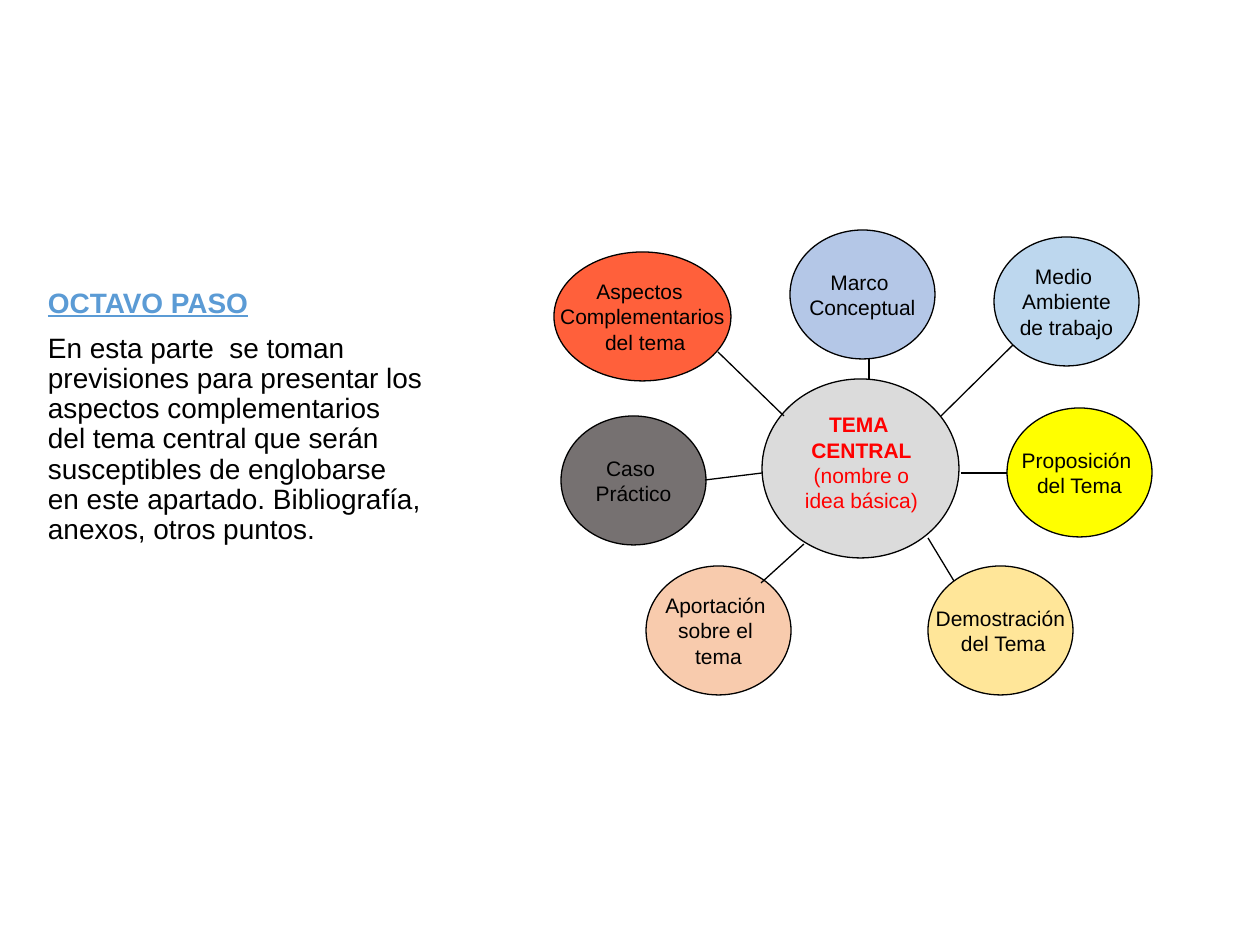
from lxml import etree
from pptx import Presentation
from pptx.dml.color import RGBColor
from pptx.enum.shapes import MSO_CONNECTOR, MSO_SHAPE
from pptx.enum.text import MSO_ANCHOR, PP_ALIGN
from pptx.oxml.ns import qn
from pptx.util import Pt

ELLIPSE = MSO_SHAPE.OVAL
STRAIGHT = MSO_CONNECTOR.STRAIGHT
CENTER = PP_ALIGN.CENTER
LEFT = PP_ALIGN.LEFT
MIDDLE = MSO_ANCHOR.MIDDLE
TOP = MSO_ANCHOR.TOP

SCALE = 914400 / 126
FONT = "Arial"
LINE_WIDTH = Pt(0.75)
TOPIC_HEIGHT = 129
COLORS = {
    "black": "000000",
    "red": "FF0000",
    "blue": "5B9BD5",
    "silver": "DBDBDB",
    "coral": "FF603B",
    "yellow": "FFFF00",
    "sky": "BDD7EE",
    "sand": "FFE699",
    "periwinkle": "B4C7E7",
    "peach": "F8CBAD",
    "gray": "767171",
}
TOPICS = [
    (554, 252, 177, "coral", ["Aspectos ", "Complementarios", " del tema"]),
    (1007, 408, 145, "yellow", ["Proposición ", "del Tema"]),
    (994, 237, 145, "sky", ["Medio ", "Ambiente", "de trabajo"]),
    (928, 566, 145, "sand", ["Demostración", " del Tema"]),
    (790, 230, 145, "periwinkle", ["Marco ", "Conceptual"]),
    (646, 566, 145, "peach", ["Aportación ", "sobre el ", "tema"]),
    (561, 416, 145, "gray", ["Caso ", "Práctico"]),
]
SPOKES = [
    (718, 352, 784, 416),
    (1013, 345, 941, 416),
    (705, 480, 762, 473),
    (961, 473, 1007, 473),
    (804, 544, 761, 583),
    (928, 538, 954, 581),
    (869, 359, 869, 380),
]
BODY = (
    "En esta parte  se toman previsiones para presentar los aspectos "
    "complementarios del tema central que serán susceptibles de englobarse "
    "en este apartado. Bibliografía, anexos, otros puntos."
)


def px(*lengths):
    return [round(length * SCALE) for length in lengths]


def color(name):
    return RGBColor.from_string(COLORS[name])


def apply_format(target, values):
    for name, value in values.items():
        setattr(target, name, value)


def set_frame(frame, wrap, anchor, margins):
    sides = ("margin_left", "margin_top", "margin_right", "margin_bottom")
    apply_format(frame, {"word_wrap": wrap, "vertical_anchor": anchor})
    apply_format(frame, dict(zip(sides, px(*margins))))


def write_lines(frame, lines, size, align, spacing=None):
    for index, (text, ink, style) in enumerate(lines):
        para = frame.add_paragraph() if index else frame.paragraphs[0]
        apply_format(para, {"alignment": align, "line_spacing": spacing})
        span = para.add_run()
        span.text = text
        apply_format(span.font, {"name": FONT, "size": Pt(size), **style})
        span.font.color.rgb = color(ink)


def add_ellipse(shapes, left, top, width, height, fill):
    ellipse = shapes.add_shape(ELLIPSE, *px(left, top, width, height))
    ellipse.shadow.inherit = False
    ellipse.fill.solid()
    ellipse.fill.fore_color.rgb = color(fill)
    ellipse.line.color.rgb = color("black")
    ellipse.line.width = LINE_WIDTH
    return ellipse


def add_topic(shapes, left, top, width, fill, lines):
    ellipse = add_ellipse(shapes, left, top, width, TOPIC_HEIGHT, fill)
    set_frame(ellipse.text_frame, False, MIDDLE, (9, 5, 9, 5))
    write_lines(ellipse.text_frame, [(line, "black", {}) for line in lines], 12, CENTER)


def add_center(shapes):
    add_ellipse(shapes, 762, 379, 197, 179, "silver")
    box = shapes.add_textbox(*px(791, 407, 141, 111))
    set_frame(box.text_frame, True, TOP, (9, 5, 9, 5))
    lines = [
        ("TEMA ", "red", {"bold": True}),
        ("CENTRAL", "red", {"bold": True}),
        ("(nombre o", "red", {}),
        ("idea básica)", "red", {}),
    ]
    write_lines(box.text_frame, lines, 12, CENTER)


def add_spoke(shapes, *ends):
    spoke = shapes.add_connector(STRAIGHT, *px(*ends))
    spoke.line.color.rgb = color("black")
    spoke.line.width = LINE_WIDTH
    etree.SubElement(spoke._element.spPr, qn("a:effectLst"))


def add_explanation(shapes):
    box = shapes.add_textbox(*px(35, 283, 401, 465))
    set_frame(box.text_frame, True, TOP, (13, 6, 13, 6))
    lines = [
        ("OCTAVO PASO", "blue", {"bold": True, "underline": True}),
        (BODY, "black", {}),
    ]
    write_lines(box.text_frame, lines, 16, LEFT, 0.9)
    box.text_frame.paragraphs[1].space_before = Pt(8.5)


def main():
    deck = Presentation()
    deck.slide_width, deck.slide_height = px(1260, 945)
    page = deck.slides.add_slide(deck.slide_layouts[6])
    add_explanation(page.shapes)
    diagram = page.shapes.add_group_shape().shapes
    add_center(diagram)
    for topic in TOPICS:
        add_topic(diagram, *topic)
    for spoke in SPOKES:
        add_spoke(diagram, *spoke)
    deck.save("out.pptx")


if __name__ == "__main__":
    main()
